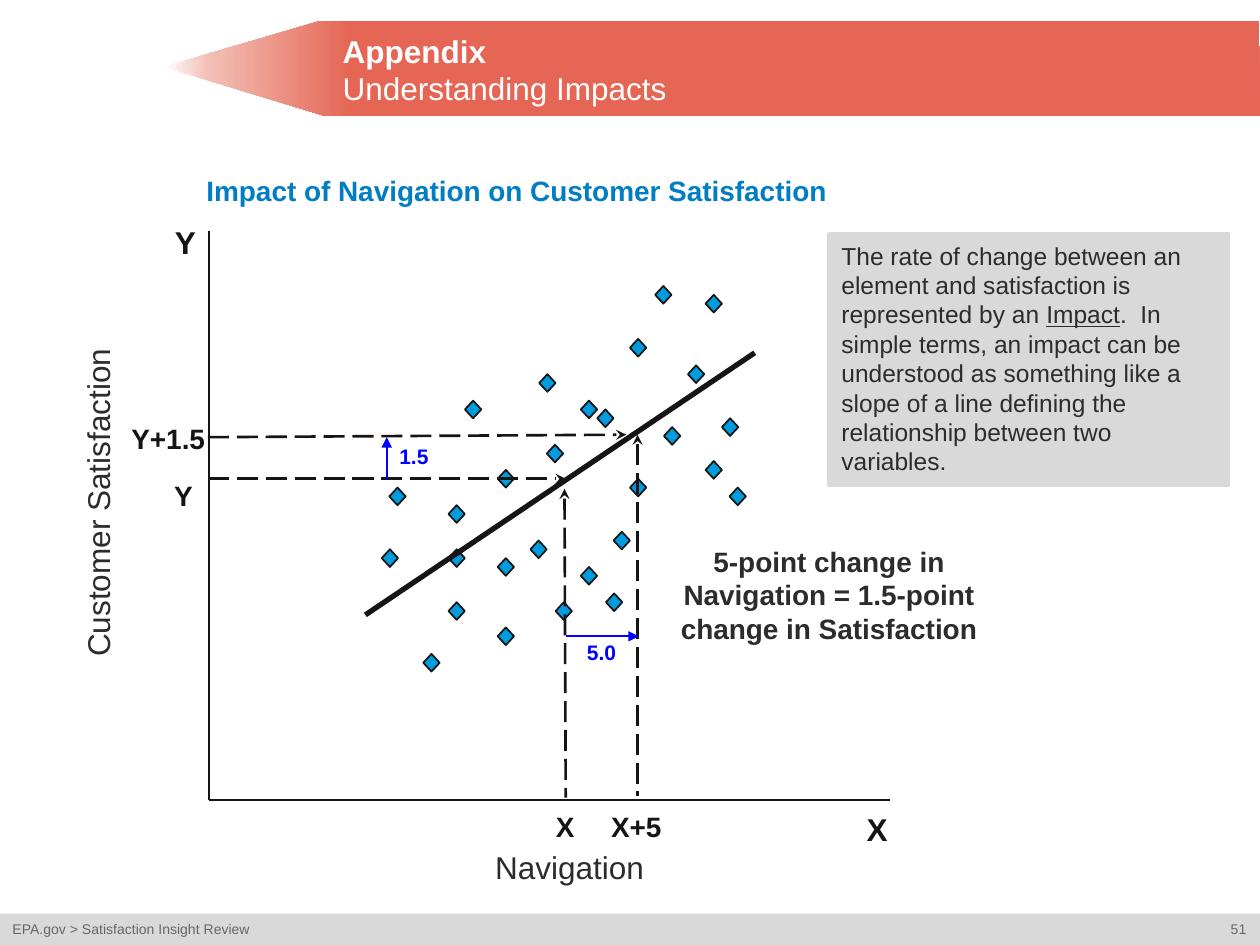
from pptx import Presentation
from pptx.dml.color import RGBColor
from pptx.enum.dml import MSO_LINE
from pptx.enum.shapes import MSO_CONNECTOR, MSO_SHAPE
from pptx.enum.text import MSO_ANCHOR, MSO_AUTO_SIZE, PP_ALIGN
from pptx.oxml import parse_xml
from pptx.oxml.ns import nsdecls
from pptx.oxml.xmlchemy import OxmlElement
from pptx.util import Inches, Pt

WHITE = RGBColor(0xFF, 0xFF, 0xFF)
INK = RGBColor(0x15, 0x15, 0x15)
TEXT = RGBColor(0x2C, 0x2C, 0x2C)
GRAY = RGBColor(0x67, 0x67, 0x67)
PANEL = RGBColor(0xD9, 0xD9, 0xD9)
MARKER = RGBColor(0x00, 0x9C, 0xDE)
HEADING = RGBColor(0x00, 0x7D, 0xC3)
BLUE = RGBColor(0x00, 0x00, 0xFF)

prs = Presentation()
prs.slide_width, prs.slide_height = Inches(10), Inches(7.5)
slide = prs.slides.add_slide(prs.slide_layouts[5])
shapes = slide.shapes


def add_label(text, box, size, color, bold=False, align=PP_ALIGN.CENTER, wrap=False):
    label = shapes.add_textbox(*[Inches(v) for v in box])
    frame = label.text_frame
    frame.word_wrap = wrap
    frame.auto_size = MSO_AUTO_SIZE.SHAPE_TO_FIT_TEXT
    paragraph = frame.paragraphs[0]
    paragraph.alignment = align
    run = paragraph.add_run()
    run.text = text
    run.font.name, run.font.size, run.font.bold = "Arial", Pt(size), bold
    run.font.color.rgb = color
    return label


def add_line(start, end, color, width, dash=None, arrow_end=None, arrow_type="stealth"):
    points = [Inches(v) for v in start + end]
    line = shapes.add_connector(MSO_CONNECTOR.STRAIGHT, *points)
    line.line.color.rgb = color
    line.line.width = Pt(width)
    if dash:
        line.line.dash_style = dash
    if arrow_end:
        arrow = OxmlElement(arrow_end)
        arrow.set("type", arrow_type)
        line.line._get_or_add_ln().append(arrow)
    line.element.spPr.append(OxmlElement("a:effectLst"))


builder = shapes.build_freeform(Inches(1.3), Inches(0.53))
builder.add_line_segments(
    [(Inches(x), Inches(y)) for x, y in [(2.53, 0.17), (9.99, 0.17), (10, 0.92), (2.58, 0.92)]]
)
banner = builder.convert_to_shape()
banner.shadow.inherit = False
banner.line.fill.background()
banner.fill.gradient()
banner.fill.gradient_angle = 0
stops = banner.element.spPr.find(".//{*}gsLst")
for stop in list(stops):
    stops.remove(stop)
for percent, color in [(0, "FFFFFF"), (4, "F3C0B7"), (17, "E56655")]:
    stops.append(parse_xml(
        f'<a:gs {nsdecls("a")} pos="{percent * 1000}"><a:srgbClr val="{color}"/></a:gs>'
    ))

footer = shapes.add_shape(MSO_SHAPE.RECTANGLE, 0, Inches(7.25), Inches(10), Inches(0.25))
footer.shadow.inherit = False
footer.fill.solid()
footer.fill.fore_color.rgb = PANEL
footer.line.fill.background()
add_label("51", (9.66, 7.26, 0.34, 0.24), 8, GRAY)
add_label("EPA.gov > Satisfaction Insight Review", (0, 7.26, 2.12, 0.24), 8, GRAY,
          align=PP_ALIGN.LEFT)

title = shapes.title
shapes.element.append(title.element)
title.left, title.top = Inches(2.62), Inches(0.18)
title.width, title.height = Inches(7.07), Inches(0.74)
title.text_frame.auto_size = MSO_AUTO_SIZE.NONE
title.text_frame.vertical_anchor = MSO_ANCHOR.MIDDLE
heading = title.text_frame.paragraphs[0]
heading.alignment = PP_ALIGN.LEFT
for text, bold in [("Appendix", True), ("Understanding Impacts", False)]:
    if not bold:
        heading.add_line_break()
    run = heading.add_run()
    run.text = text
    run.font.name, run.font.size, run.font.bold = "Arial", Pt(18), bold
    run.font.color.rgb = WHITE

add_label("5.0", (4.56, 5.03, 0.43, 0.3), 12, BLUE, True)
add_label("1.5", (3.07, 3.47, 0.43, 0.3), 12, BLUE, True)

add_line((1.66, 1.83), (1.66, 6.35), INK, 1)
add_line((1.66, 6.35), (7.06, 6.35), INK, 1)
add_label("Y", (1.29, 1.72, 0.37, 0.4), 18, INK, True, PP_ALIGN.LEFT)
add_label("X", (6.78, 6.38, 0.37, 0.4), 18, INK, True, PP_ALIGN.LEFT)

observations = [
    (3.36, 5.19), (3.56, 4.36), (3.95, 4.98), (5.2, 2.27), (5.46, 2.9), (3.03, 4.36),
    (4.34, 3.53), (3.95, 3.73), (4.74, 3.25), (4.21, 4.29), (4.28, 2.97), (5.73, 3.32),
    (3.56, 4.78), (5, 3.8), (5.79, 3.87), (4.87, 4.22), (4.61, 4.5), (3.09, 3.87),
    (3.69, 3.18), (4.41, 4.78), (4.81, 4.71), (5.6, 2.34), (5.27, 3.39), (3.95, 4.43),
    (4.61, 3.18), (3.56, 4.01), (5.6, 3.66), (5, 2.69),
]
for x, y in observations:
    marker = shapes.add_shape(MSO_SHAPE.DIAMOND, Inches(x), Inches(y), Inches(0.13), Inches(0.14))
    marker.shadow.inherit = False
    marker.fill.solid()
    marker.fill.fore_color.rgb = MARKER
    marker.line.color.rgb = INK
    marker.line.width = Pt(1)
add_line((2.9, 4.88), (5.99, 2.8), INK, 3)

y_axis_name = add_label("Customer Satisfaction", (-0.55, 3.79, 2.65, 0.4), 18, TEXT)
y_axis_name.rotation = 270
add_label("Navigation", (3.83, 6.68, 1.38, 0.4), 18, TEXT)

for start, end, arrow_end in [
    ((5.06, 3.45), (5.06, 6.32), "a:headEnd"),
    ((1.65, 3.8), (4.49, 3.8), "a:tailEnd"),
    ((4.48, 3.88), (4.49, 6.33), "a:headEnd"),
    ((1.65, 3.47), (4.97, 3.45), "a:tailEnd"),
]:
    add_line(start, end, INK, 1.5, MSO_LINE.LONG_DASH, arrow_end)

for text, left, top, width in [
    ("X", 4.31, 6.38, 0.35), ("Y", 1.28, 3.75, 0.35),
    ("X+5", 4.75, 6.38, 0.6), ("Y+1.5", 0.94, 3.3, 0.79),
]:
    add_label(text, (left, top, width, 0.37), 16, INK, True)

add_label("5-point change in Navigation = 1.5-point change in Satisfaction",
          (5.25, 4.27, 2.66, 0.9), 16, TEXT, True, wrap=True)
for start, end in [((4.49, 5.05), (5.07, 5.05)), ((3.07, 3.8), (3.07, 3.47))]:
    add_line(start, end, BLUE, 1.25, arrow_end="a:tailEnd", arrow_type="triangle")

chart_heading = add_label("Impact of Navigation on Customer Satisfaction",
                          (1.54, 1.33, 6.5, 1.42), 16, HEADING, True, PP_ALIGN.LEFT, True)
chart_heading.text_frame.auto_size = MSO_AUTO_SIZE.NONE

explanation = shapes.add_shape(MSO_SHAPE.RECTANGLE, Inches(6.58), Inches(1.86),
                               Inches(3.17), Inches(1.99))
explanation.shadow.inherit = False
explanation.fill.solid()
explanation.fill.fore_color.rgb = PANEL
explanation.line.color.rgb = PANEL
explanation.line.width = Pt(2.25)
frame = explanation.text_frame
frame.word_wrap = True
frame.auto_size = MSO_AUTO_SIZE.SHAPE_TO_FIT_TEXT
frame.vertical_anchor = MSO_ANCHOR.TOP
paragraph = frame.paragraphs[0]
paragraph.alignment = PP_ALIGN.LEFT
for text, underlined in [
    ("The rate of change between an element and satisfaction is represented by an ", False),
    ("Impact", True),
    (".  In simple terms, an impact can be understood as something like a slope of a line "
     "defining the relationship between two variables.", False),
]:
    run = paragraph.add_run()
    run.text = text
    run.font.name, run.font.size, run.font.underline = "Arial", Pt(14), underlined
    run.font.color.rgb = TEXT

prs.save("out.pptx")
